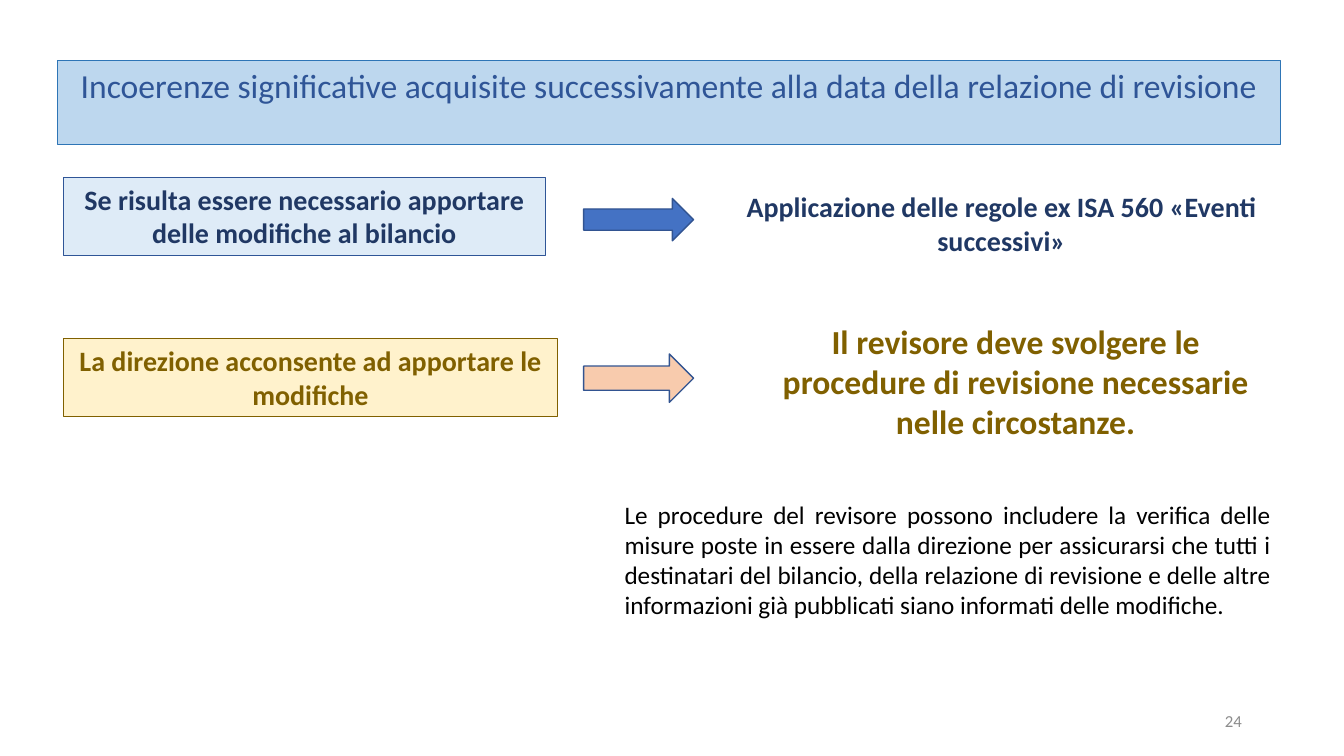
import pptx
import pptx.dml.color
import pptx.enum.shapes
import pptx.enum.text
import pptx.util
from pptx.util import Cm

COLOURS = {
    "title fill": "BDD7EE", "title line": "2E75B6", "blue": "2F5597",
    "pale blue": "DEEBF7", "navy": "203864",
    "cream": "FFF2CC", "ochre": "806000",
    "arrow blue": "4472C4", "arrow peach": "F8CBAD", "arrow line": "325491",
    "black": "000000", "grey": "8C8C8C",
}
ALIGN = pptx.enum.text.PP_ALIGN
ANCHOR = pptx.enum.text.MSO_ANCHOR
SHAPE = pptx.enum.shapes.MSO_SHAPE
BOX_HEIGHT = Cm(1.96)


def colour(name):
    return pptx.dml.color.RGBColor.from_string(COLOURS[name])


def write(shape, text, *, size, ink, bold=False, align=ALIGN.CENTER,
          anchor=ANCHOR.TOP, fit=pptx.enum.text.MSO_AUTO_SIZE.SHAPE_TO_FIT_TEXT):
    frame = shape.text_frame
    frame.word_wrap = True
    frame.auto_size = fit
    frame.vertical_anchor = anchor
    para = frame.paragraphs[0]
    para.alignment = align
    span = para.add_run()
    span.text = text
    span.font.name = "Calibri"
    span.font.size = pptx.util.Pt(size)
    span.font.bold = bold
    span.font.color.rgb = colour(ink)


def paint(shape, fill, line, width):
    shape.fill.solid()
    shape.fill.fore_color.rgb = colour(fill)
    shape.line.color.rgb = colour(line)
    shape.line.width = pptx.util.Pt(width)


def add_title(slide, text):
    title = slide.shapes.title
    title.left, title.top = Cm(1.45), Cm(1.52)
    title.width, title.height = Cm(30.81), Cm(1.3)
    paint(title, "title fill", "title line", 0.75)
    write(title, text, size=24, ink="blue")


def add_shape(slide, kind, place, fill, line, width):
    shape = slide.shapes.add_shape(kind, *place)
    shape.shadow.inherit = False
    paint(shape, fill, line, width)
    return shape


def add_condition(slide, text, top, width, fill, line, ink):
    box = add_shape(slide, SHAPE.RECTANGLE, (Cm(1.6), top, width, BOX_HEIGHT),
                    fill, line, 0.75)
    write(box, text, size=20, ink=ink, bold=True)


def add_arrow(slide, top, height, fill):
    add_shape(slide, SHAPE.RIGHT_ARROW, (Cm(14.71), top, Cm(2.77), height),
              fill, "arrow line", 1)


def add_text(slide, text, left, top, width, height, **style):
    write(slide.shapes.add_textbox(left, top, width, height), text, **style)


def main():
    deck = pptx.Presentation()
    deck.slide_width, deck.slide_height = Cm(33.87), Cm(19.05)
    slide = deck.slides.add_slide(deck.slide_layouts.get_by_name("Title Only"))

    add_title(slide, "Incoerenze significative acquisite successivamente "
                     "alla data della relazione di revisione")

    add_condition(slide, "Se risulta essere necessario apportare delle modifiche al bilancio",
                  Cm(4.47), Cm(12.14), "pale blue", "blue", "navy")
    add_text(slide, "Applicazione delle regole ex ISA 560 «Eventi successivi»",
             Cm(18.19), Cm(4.65), Cm(14.1), BOX_HEIGHT, size=20, ink="navy", bold=True)
    add_arrow(slide, Cm(5), Cm(1.07), "arrow blue")

    add_condition(slide, "La direzione acconsente ad apportare le modifiche",
                  Cm(8.53), Cm(12.45), "cream", "ochre", "ochre")
    add_text(slide, "Il revisore deve svolgere le procedure di revisione necessarie "
                    "nelle circostanze.",
             Cm(18.9), Cm(7.95), Cm(13.39), Cm(3.33), size=24, ink="ochre", bold=True)
    add_arrow(slide, Cm(8.92), Cm(1.22), "arrow peach")

    add_text(slide, "Le procedure del revisore possono includere la verifica delle misure "
                    "poste in essere dalla direzione per assicurarsi che tutti i destinatari "
                    "del bilancio, della relazione di revisione e delle altre informazioni "
                    "già pubblicati siano informati delle modifiche.",
             Cm(15.49), Cm(12.45), Cm(16.79), Cm(3.33),
             size=18, ink="black", align=ALIGN.JUSTIFY)
    add_text(slide, "24", Cm(23.93), Cm(17.65), Cm(7.62), Cm(1.02),
             size=12, ink="grey", align=ALIGN.RIGHT, anchor=ANCHOR.MIDDLE,
             fit=pptx.enum.text.MSO_AUTO_SIZE.NONE)

    deck.save("out.pptx")


if __name__ == "__main__":
    main()
